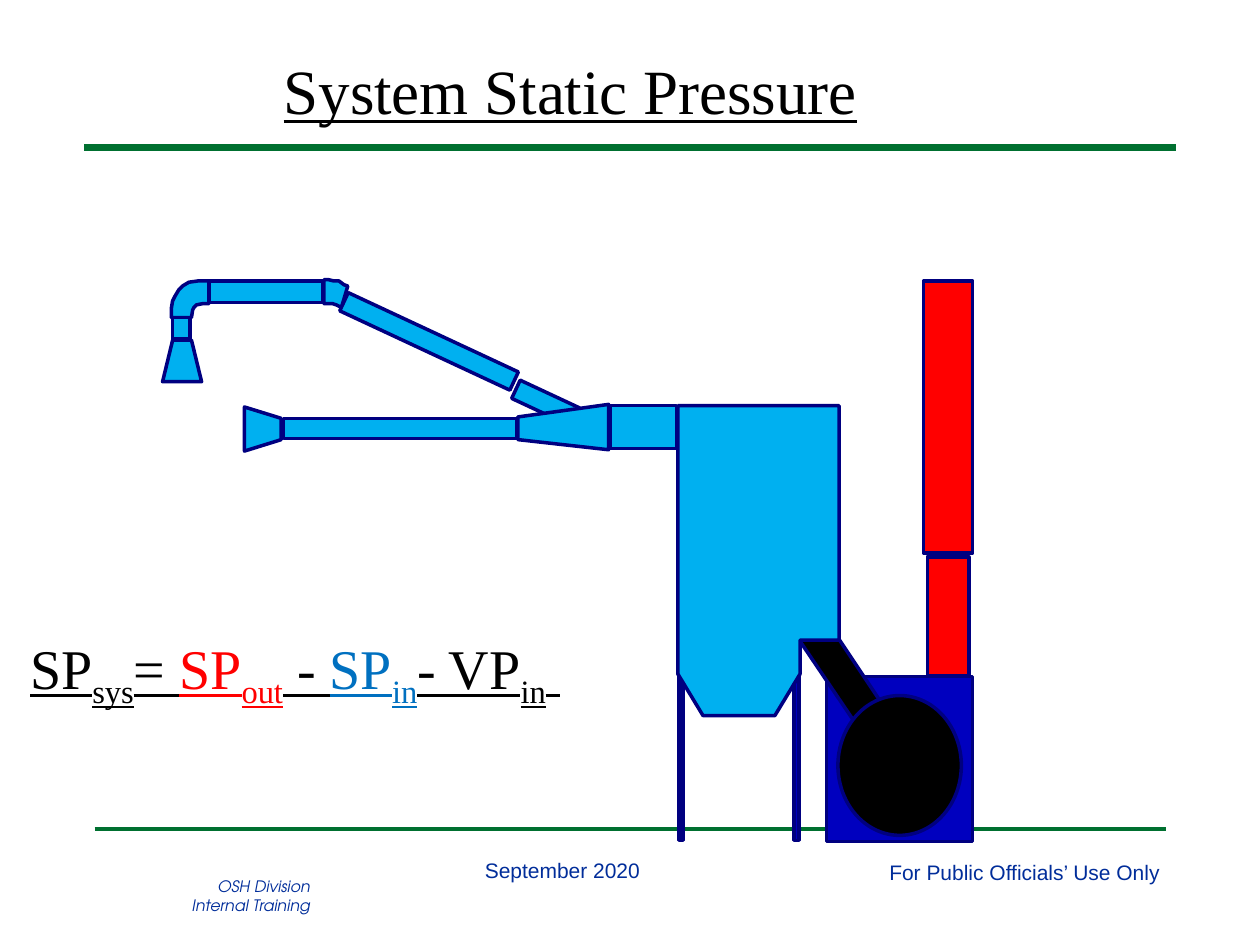
from dataclasses import dataclass

from lxml.etree import SubElement
from pptx import Presentation
from pptx.dml.color import RGBColor
from pptx.enum.shapes import MSO_CONNECTOR as Connector, MSO_SHAPE as Shape
from pptx.enum.text import MSO_ANCHOR as Anchor, MSO_AUTO_SIZE as AutoSize, PP_ALIGN as Align
from pptx.oxml.ns import qn
from pptx.util import Pt

EMU_PER_PX = 9144
BLACK = RGBColor(0x00, 0x00, 0x00)
GREEN = RGBColor(0x00, 0x70, 0x30)
NAVY = RGBColor(0x00, 0x00, 0x80)
BLUE = RGBColor(0x00, 0x00, 0xBF)
SKY = RGBColor(0x00, 0xB0, 0xF0)
RED = RGBColor(0xFF, 0x00, 0x00)
INLET_BLUE = RGBColor(0x00, 0x70, 0xC0)
FOOTER_BLUE = RGBColor(0x01, 0x2D, 0x9A)
SERIF = "Times New Roman"


@dataclass
class Preset:
    box: tuple[int, int, int, int]
    fill: RGBColor = SKY
    rotation: int = 0
    kind: Shape = Shape.RECTANGLE


@dataclass
class Outline:
    points: list[tuple[int, int]]
    fill: RGBColor = SKY


@dataclass
class Rule:
    left: int
    right: int
    y: int
    weight: int


@dataclass
class Label:
    box: tuple[int, int, int, int]
    lines: list[str]
    size: int
    font: str
    align: Align = Align.LEFT
    italic: bool = False


@dataclass
class Term:
    text: str
    subscript: str
    color: RGBColor = BLACK


RULES = [Rule(67, 933, 117, 4), Rule(75, 925, 658, 2)]

LABELS = [
    Label((696, 677, 237, 30), ["For Public Officials’ Use Only"], 12, "Arial"),
    Label((117, 691, 139, 49), ["OSH Division", "Internal Training"], 9,
          "TeX Gyre Adventor", Align.RIGHT, True),
    Label((375, 676, 144, 30), ["September 2020"], 12, "Arial"),
]

PARTS = [
    Preset((736, 442, 33, 94), RED),
    Outline([(257, 222), (261, 222), (265, 223), (269, 223), (273, 226), (276, 227),
             (271, 244), (267, 242), (264, 241), (260, 241), (257, 241)]),
    Preset((407, 312, 52, 16), rotation=25),
    Preset((656, 537, 116, 131), BLUE),
    Preset((539, 516, 3, 151), BLUE),
    Preset((630, 516, 4, 151), BLUE),
    Outline([(633, 506), (683, 580), (703, 563), (653, 488)], BLACK),
    Preset((665, 552, 98, 111), BLACK, kind=Shape.OVAL),
    Preset((733, 223, 39, 216), RED),
    Preset((484, 322, 53, 34)),
    Outline([(483, 321), (411, 331), (411, 349), (483, 357)]),
    Preset((225, 332, 185, 16)),
    Preset((266, 263, 149, 16), rotation=25),
    Outline([(166, 223), (161, 223), (157, 223), (150, 224), (145, 227), (142, 230),
             (139, 235), (137, 239), (136, 245), (136, 252), (152, 252), (153, 246),
             (154, 244), (156, 242), (161, 241), (166, 241)]),
    Outline([(129, 303), (137, 270), (152, 270), (160, 303)]),
    Preset((137, 252, 14, 17)),
    Outline([(666, 322), (538, 322), (538, 535), (558, 568), (615, 568), (635, 535),
             (635, 508), (666, 508)]),
    Preset((166, 223, 90, 17)),
    Outline([(194, 323), (223, 332), (223, 349), (194, 358)]),
]

EQUATION = [
    Term("SP", "sys"), Term("= ", ""), Term("SP", "out", RED), Term(" - ", ""),
    Term("SP", "in", INLET_BLUE), Term("- VP", "in"), Term(" ", ""),
]


def emu(*lengths: int) -> list[int]:
    return [n * EMU_PER_PX for n in lengths]


def draw_rule(shapes, rule: Rule) -> None:
    s = shapes.add_connector(Connector.STRAIGHT,
                             *emu(rule.left, rule.y, rule.right, rule.y))
    s.line.color.rgb = GREEN
    s.line.width = Pt(rule.weight)
    SubElement(s._element.spPr, qn("a:effectLst"))


def draw_part(shapes, part: Preset | Outline) -> None:
    if isinstance(part, Preset):
        s = shapes.add_shape(part.kind, *emu(*part.box))
        s.rotation = part.rotation
    else:
        builder = shapes.build_freeform(*part.points[0], scale=EMU_PER_PX)
        builder.add_line_segments(part.points[1:], close=True)
        s = builder.convert_to_shape()
    s.shadow.inherit = False
    s.fill.solid()
    s.fill.fore_color.rgb = part.fill
    s.line.color.rgb = NAVY
    s.line.width = Pt(2)


def draw_label(shapes, label: Label) -> None:
    tf = shapes.add_textbox(*emu(*label.box)).text_frame
    tf.word_wrap = False
    tf.text = "\n".join(label.lines)
    for p in tf.paragraphs:
        p.alignment = label.align
        p.font.size = Pt(label.size)
        p.font.name = label.font
        p.font.italic = label.italic
        p.font.color.rgb = FOOTER_BLUE


def draw_title(title) -> None:
    title.left, title.top, title.width, title.height = emu(215, 36, 548, 71)
    tf = title.text_frame
    tf.text = "System Static Pressure"
    tf.auto_size = AutoSize.NONE
    tf.vertical_anchor = Anchor.TOP
    p = tf.paragraphs[0]
    p.alignment = Align.LEFT
    p.font.size = Pt(36)
    p.font.name = SERIF
    p.font.underline = True
    p.font.color.rgb = BLACK


def add_term(p, term: Term) -> None:
    for text, baseline in ((term.text, 0), (term.subscript, -25000)):
        if text:
            r = p.add_run()
            r.text = text
            r.font.color.rgb = term.color
            if baseline:
                r._r.get_or_add_rPr().set("baseline", str(baseline))


def draw_equation(shapes, terms: list[Term]) -> None:
    tf = shapes.add_textbox(*emu(14, 498, 446, 64)).text_frame
    tf.word_wrap = True
    p = tf.paragraphs[0]
    p.font.size = Pt(32)
    p.font.name = SERIF
    p.font.underline = True
    for term in terms:
        add_term(p, term)


def main() -> None:
    prs = Presentation()
    prs.slide_width, prs.slide_height = emu(1000, 750)
    shapes = prs.slides.add_slide(prs.slide_layouts[5]).shapes
    draw_title(shapes.title)
    for rule in RULES:
        draw_rule(shapes, rule)
    for label in LABELS:
        draw_label(shapes, label)
    for part in PARTS:
        draw_part(shapes, part)
    draw_equation(shapes, EQUATION)
    prs.save("out.pptx")


if __name__ == "__main__":
    main()
